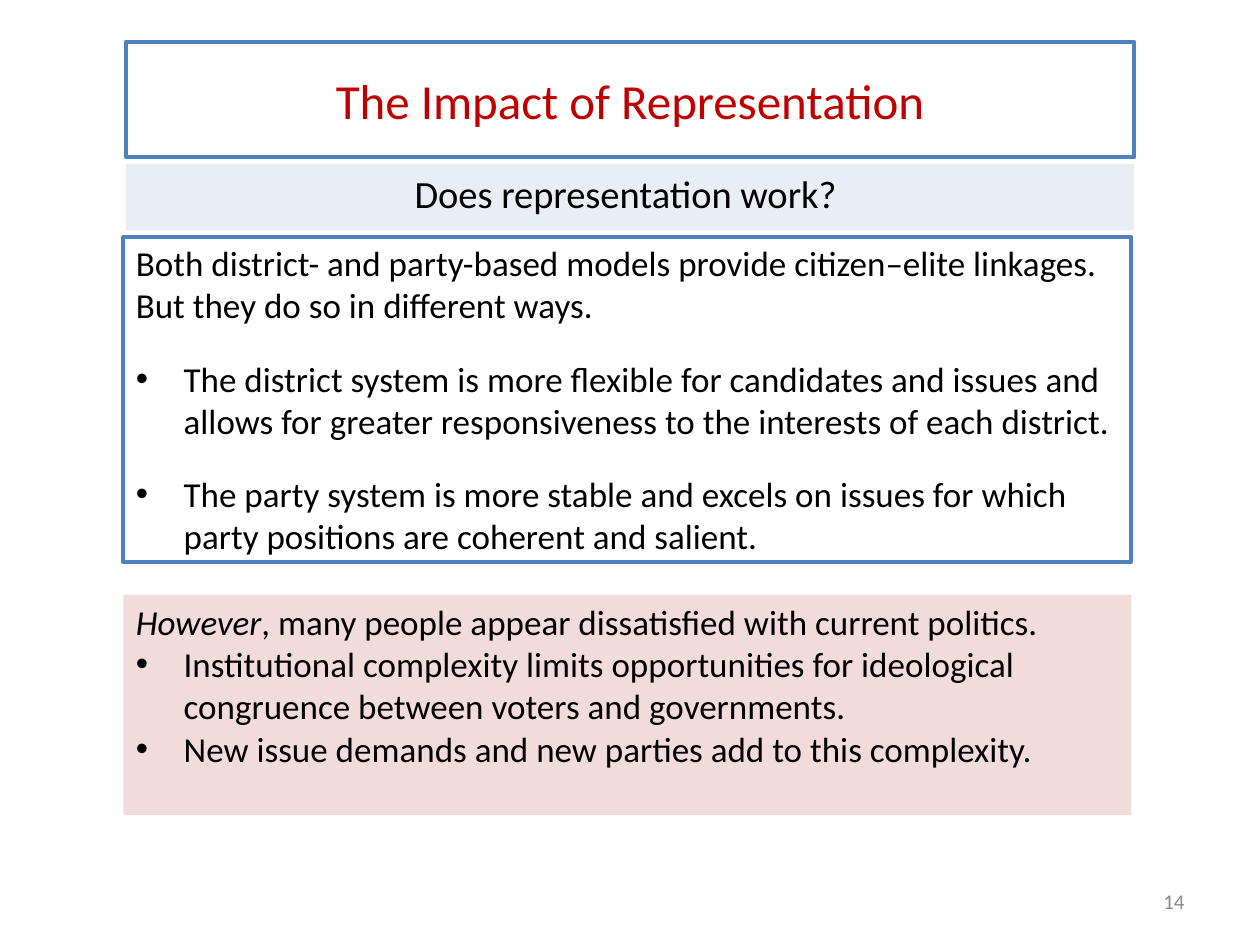
"""Build the slide on the impact of representation."""
from lxml.etree import SubElement
from pptx import Presentation
from pptx.dml.color import RGBColor
from pptx.enum.shapes import MSO_SHAPE
from pptx.enum.text import MSO_ANCHOR as ANCHOR, MSO_AUTO_SIZE, PP_ALIGN as ALIGN
from pptx.oxml.ns import qn
from pptx.util import Inches, Pt

TITLE = [("The Impact of Representation", False)]
QUESTION = [("Does representation work? ", False)]
MODELS = [
    ("Both district- and party-based models provide citizen–elite linkages. "
     "But they do so in different ways.", False),
    ("The district system is more flexible for candidates and issues and allows "
     "for greater responsiveness to the interests of each district.", True),
    ("The party system is more stable and excels on issues for which party "
     "positions are coherent and salient.", True),
]
HOWEVER = [
    ("*However*, many people appear dissatisfied with current politics.", False),
    ("Institutional complexity limits opportunities for ideological congruence "
     "between voters and governments.", True),
    ("New issue demands and new parties add to this complexity.", True),
]
NUMBER = [("14", False)]

BLUE, RED, BLACK, GREY = "4F81BD", "C00000", "000000", "898989"
PALE_BLUE, PALE_RED = "E9EDF4", "F2DCDB"
INDENT = 0.38


def color(value):
    return RGBColor.from_string(value)


def add_bullet(paragraph):
    properties = paragraph._p.get_or_add_pPr()
    properties.set("marL", str(Inches(INDENT)))
    properties.set("indent", str(-Inches(INDENT)))
    SubElement(properties, qn("a:buFont")).set("typeface", "Arial")
    SubElement(properties, qn("a:buChar")).set("char", "•")


def write_text(shape, paragraphs, size, ink=BLACK, align=ALIGN.LEFT,
               anchor=ANCHOR.TOP, after=0):
    frame = shape.text_frame
    frame.word_wrap = True
    frame.auto_size = MSO_AUTO_SIZE.NONE
    frame.vertical_anchor = anchor
    for index, (text, bulleted) in enumerate(paragraphs):
        paragraph = frame.add_paragraph() if index else frame.paragraphs[0]
        paragraph.alignment = align
        paragraph.space_before, paragraph.space_after = Pt(0), Pt(after)
        if bulleted:
            add_bullet(paragraph)
        for part, words in enumerate(text.split("*")):
            if not words:
                continue
            run = paragraph.add_run()
            run.text = words
            font = {"name": "Calibri", "size": Pt(size), "italic": part % 2 == 1}
            for name, value in font.items():
                setattr(run.font, name, value)
            run.font.color.rgb = color(ink)


def place(shape, left, top, width, height):
    box = {"left": left, "top": top, "width": width, "height": height}
    for name, value in box.items():
        setattr(shape, name, Inches(value))


def outline(shape):
    shape.line.color.rgb = color(BLUE)
    shape.line.width = Pt(2.25)


def add_panel(slide, left, top, height, fill=None):
    box = [Inches(value) for value in (left, top, 8, height)]
    panel = slide.shapes.add_shape(MSO_SHAPE.RECTANGLE, *box)
    panel.shadow.inherit = False
    if fill:
        panel.fill.solid()
        panel.fill.fore_color.rgb = color(fill)
        panel.line.fill.background()
    else:
        panel.fill.background()
        outline(panel)
    return panel


def main():
    presentation = Presentation()
    presentation.slide_width, presentation.slide_height = Inches(10), Inches(7.5)
    slide = presentation.slides.add_slide(presentation.slide_layouts[5])

    title = slide.shapes.title
    place(title, 1, 0.33, 8, 0.92)
    outline(title)
    write_text(title, TITLE, 28, RED, ALIGN.CENTER, ANCHOR.MIDDLE)

    question = add_panel(slide, 1, 1.3, 0.53, PALE_BLUE)
    write_text(question, QUESTION, 22, align=ALIGN.CENTER)

    number = slide.shapes.add_textbox(*map(Inches, (7.17, 6.95, 2.33, 0.4)))
    write_text(number, NUMBER, 12, GREY, ALIGN.RIGHT, ANCHOR.MIDDLE)

    models = add_panel(slide, 0.98, 1.88, 2.58)
    write_text(models, MODELS, 20, anchor=ANCHOR.MIDDLE, after=18)

    however = add_panel(slide, 0.98, 4.72, 1.75, PALE_RED)
    write_text(however, HOWEVER, 20)

    presentation.save("out.pptx")


if __name__ == "__main__":
    main()
